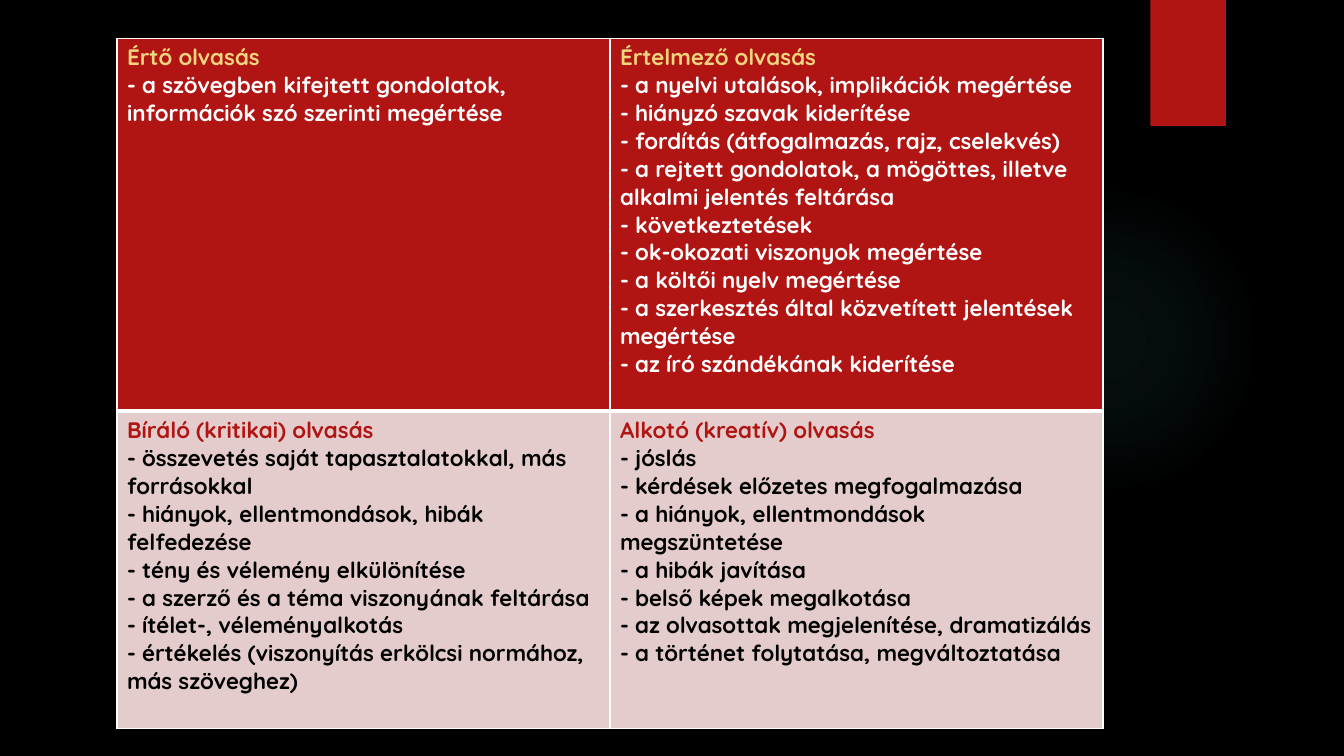
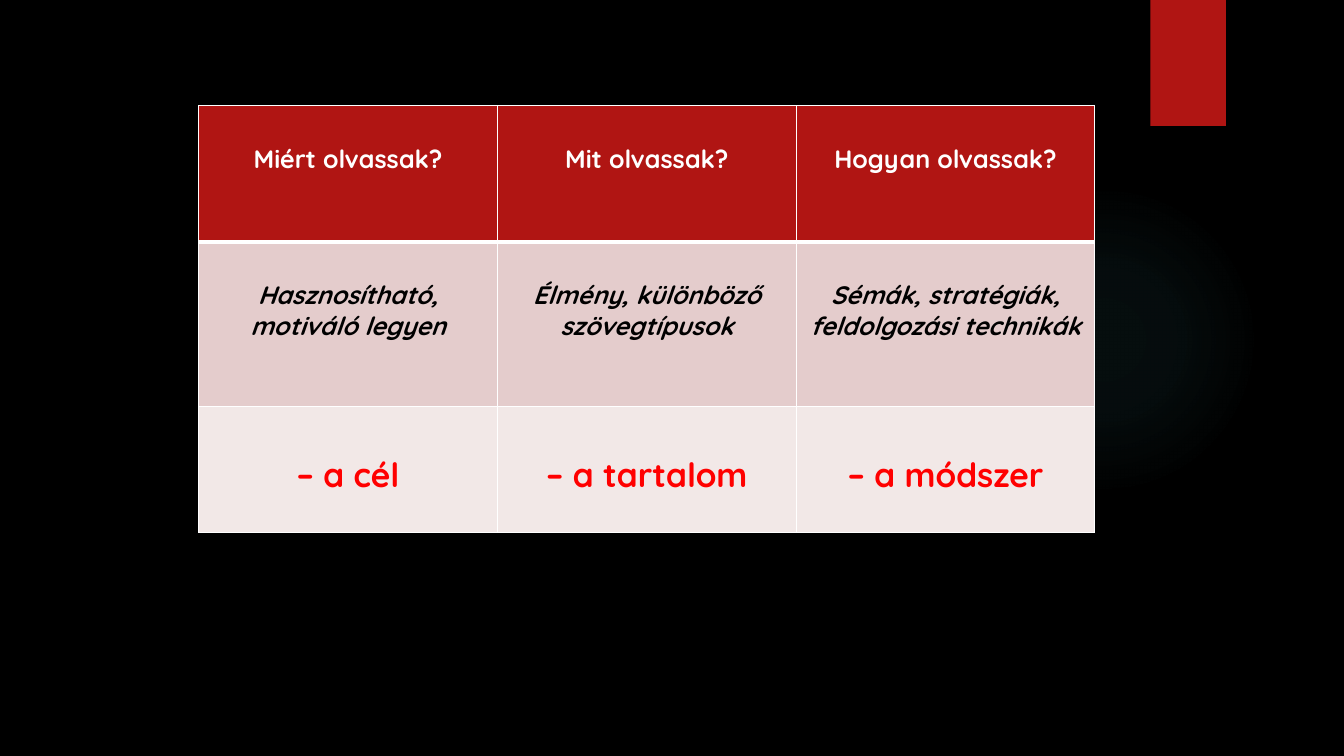
from pptx import Presentation
from pptx.dml.color import RGBColor
from pptx.enum.shapes import MSO_SHAPE
from pptx.enum.text import PP_ALIGN
from pptx.oxml import parse_xml
from pptx.oxml.ns import nsdecls
from pptx.util import Inches, Pt

BLACK = RGBColor(0x00, 0x00, 0x00)
WHITE = RGBColor(0xFF, 0xFF, 0xFF)
CRIMSON = RGBColor(0xB0, 0x15, 0x13)
GOLD = RGBColor(0xF0, 0xD4, 0x7F)
RED = RGBColor(0xFF, 0x00, 0x00)
ROSE = RGBColor(0xE4, 0xCC, 0xCC)
PALE_ROSE = RGBColor(0xF2, 0xE8, 0xE7)
TEAL = RGBColor(0x50, 0xB9, 0xC1)

FONT = "Quicksand"
THIN, THICK = 1, 3
GLOW_STOPS = ((0, 7), (36, 6), (69, 0), (100, 0))  # position %, opacity %

READING_TYPES = [
    [
        ("Értő olvasás", [
            "a szövegben kifejtett gondolatok, információk szó szerinti megértése",
        ]),
        ("Értelmező olvasás", [
            "a nyelvi utalások, implikációk megértése",
            "hiányzó szavak kiderítése",
            "fordítás (átfogalmazás, rajz, cselekvés)",
            "a rejtett gondolatok, a mögöttes, illetve alkalmi jelentés feltárása",
            "következtetések",
            "ok-okozati viszonyok megértése",
            "a költői nyelv megértése",
            "a szerkesztés által közvetített jelentések megértése",
            "az író szándékának kiderítése",
        ]),
    ],
    [
        ("Bíráló (kritikai) olvasás", [
            "összevetés saját tapasztalatokkal, más forrásokkal",
            "hiányok, ellentmondások, hibák felfedezése",
            "tény és vélemény elkülönítése",
            "a szerző és a téma viszonyának feltárása",
            "ítélet-, véleményalkotás",
            "értékelés (viszonyítás erkölcsi normához, más szöveghez)",
        ]),
        ("Alkotó (kreatív) olvasás", [
            "jóslás",
            "kérdések előzetes megfogalmazása",
            "a hiányok, ellentmondások megszüntetése",
            "a hibák javítása",
            "belső képek megalkotása",
            "az olvasottak megjelenítése, dramatizálás",
            "a történet folytatása, megváltoztatása",
        ]),
    ],
]
# fill, heading colour, item colour of each row
READING_STYLES = [(CRIMSON, GOLD, WHITE), (ROSE, CRIMSON, BLACK)]

QUESTIONS = [
    ["Miért olvassak?", "Mit olvassak?", "Hogyan olvassak?"],
    ["Hasznosítható, motiváló legyen", "Élmény, különböző szövegtípusok",
     "Sémák, stratégiák, feldolgozási technikák"],
    ["– a cél", "– a tartalom", "– a módszer"],
]
# fill, top margin, text format of each row
QUESTION_STYLES = [
    (CRIMSON, 0.37, {"size": Pt(18), "color": WHITE}),
    (ROSE, 0.37, {"size": Pt(18), "color": BLACK, "italic": True}),
    (PALE_ROSE, 0.47, {"size": Pt(24), "color": RED}),
]


def add_decor(slide, shape_kind, left, top, width, height):
    decor = slide.shapes.add_shape(
        shape_kind, Inches(left), Inches(top), Inches(width), Inches(height))
    decor.shadow.inherit = False
    decor.line.fill.background()
    return decor


def fill_with_glow(decor):
    stops = "".join(
        f'<a:gs pos="{position * 1000}"><a:srgbClr val="{TEAL}">'
        f'<a:alpha val="{opacity * 1000}"/></a:srgbClr></a:gs>'
        for position, opacity in GLOW_STOPS)
    gradient = parse_xml(
        f'<a:gradFill {nsdecls("a")} rotWithShape="1"><a:gsLst>{stops}</a:gsLst>'
        '<a:path path="circle"><a:fillToRect l="50000" t="50000" r="50000" b="50000"/>'
        '</a:path></a:gradFill>')
    decor.fill.background()
    properties = decor.element.spPr
    properties.replace(properties.find("{*}noFill"), gradient)


def add_dark_slide(prs):
    """Add a slide with the glow and the crimson band at the top right."""
    slide = prs.slides.add_slide(prs.slide_layouts[6])
    fill_with_glow(add_decor(slide, MSO_SHAPE.OVAL, 9.41, 1.83, 3.08, 3.08))
    band = add_decor(slide, MSO_SHAPE.RECTANGLE, 11.41, 0, 0.75, 1.25)
    band.fill.solid()
    band.fill.fore_color.rgb = CRIMSON
    return slide


def set_borders(cell, top, bottom):
    properties = cell._tc.get_or_add_tcPr()
    widths = {"lnL": THIN, "lnR": THIN, "lnT": top, "lnB": bottom}
    for index, (side, width) in enumerate(widths.items()):
        properties.insert(index, parse_xml(
            f'<a:{side} {nsdecls("a")} w="{Pt(width)}"><a:solidFill>'
            f'<a:srgbClr val="{WHITE}"/></a:solidFill></a:{side}>'))


def add_grid(slide, left, top, width, row_heights, column_count):
    """Add a plain white-ruled table with a thick rule under its first row."""
    grid = slide.shapes.add_table(
        len(row_heights), column_count, Inches(left), Inches(top),
        Inches(width), Inches(sum(row_heights))).table
    grid.first_row = grid.horz_banding = False
    for row_index, (row, height) in enumerate(zip(grid.rows, row_heights)):
        row.height = Inches(height)
        for cell in row.cells:
            set_borders(cell, THICK if row_index == 1 else THIN,
                        THICK if row_index == 0 else THIN)
    return grid


def write_cell(cell, fill, lines, alignment=PP_ALIGN.LEFT):
    """Fill a cell with lines, each a text and its font format."""
    cell.fill.solid()
    cell.fill.fore_color.rgb = fill
    frame = cell.text_frame
    for index, (text, text_format) in enumerate(lines):
        paragraph = frame.add_paragraph() if index else frame.paragraphs[0]
        paragraph.alignment = alignment
        font = paragraph.add_run().font
        paragraph.runs[0].text = text
        for name, value in {"name": FONT, "bold": True, **text_format}.items():
            if name == "color":
                font.color.rgb = value
            else:
                setattr(font, name, value)


def build_reading_types(slide, left, top, width):
    grid = add_grid(slide, left, top, width, [3.7, 3.15], 2)
    for row, topics, style in zip(grid.rows, READING_TYPES, READING_STYLES):
        fill, heading_color, item_color = style
        for cell, (heading, items) in zip(row.cells, topics):
            lines = [(heading, {"size": Pt(16), "color": heading_color})]
            lines += [(f"- {item}", {"size": Pt(16), "color": item_color})
                      for item in items]
            write_cell(cell, fill, lines)


def build_questions(slide, left, top, width):
    grid = add_grid(slide, left, top, width, [1.35, 1.63, 1.25], 3)
    for row, texts, style in zip(grid.rows, QUESTIONS, QUESTION_STYLES):
        fill, margin_top, text_format = style
        for cell, text in zip(row.cells, texts):
            cell.margin_top = Inches(margin_top)
            write_cell(cell, fill, [(text, text_format)], PP_ALIGN.CENTER)


def main():
    prs = Presentation()
    prs.slide_width, prs.slide_height = Inches(13.33), Inches(7.5)
    background = prs.slide_master.background.fill
    background.solid()
    background.fore_color.rgb = BLACK
    build_reading_types(add_dark_slide(prs), 1.16, 0.38, 9.78)
    build_questions(add_dark_slide(prs), 1.97, 1.05, 8.89)
    prs.save("out.pptx")


if __name__ == "__main__":
    main()
